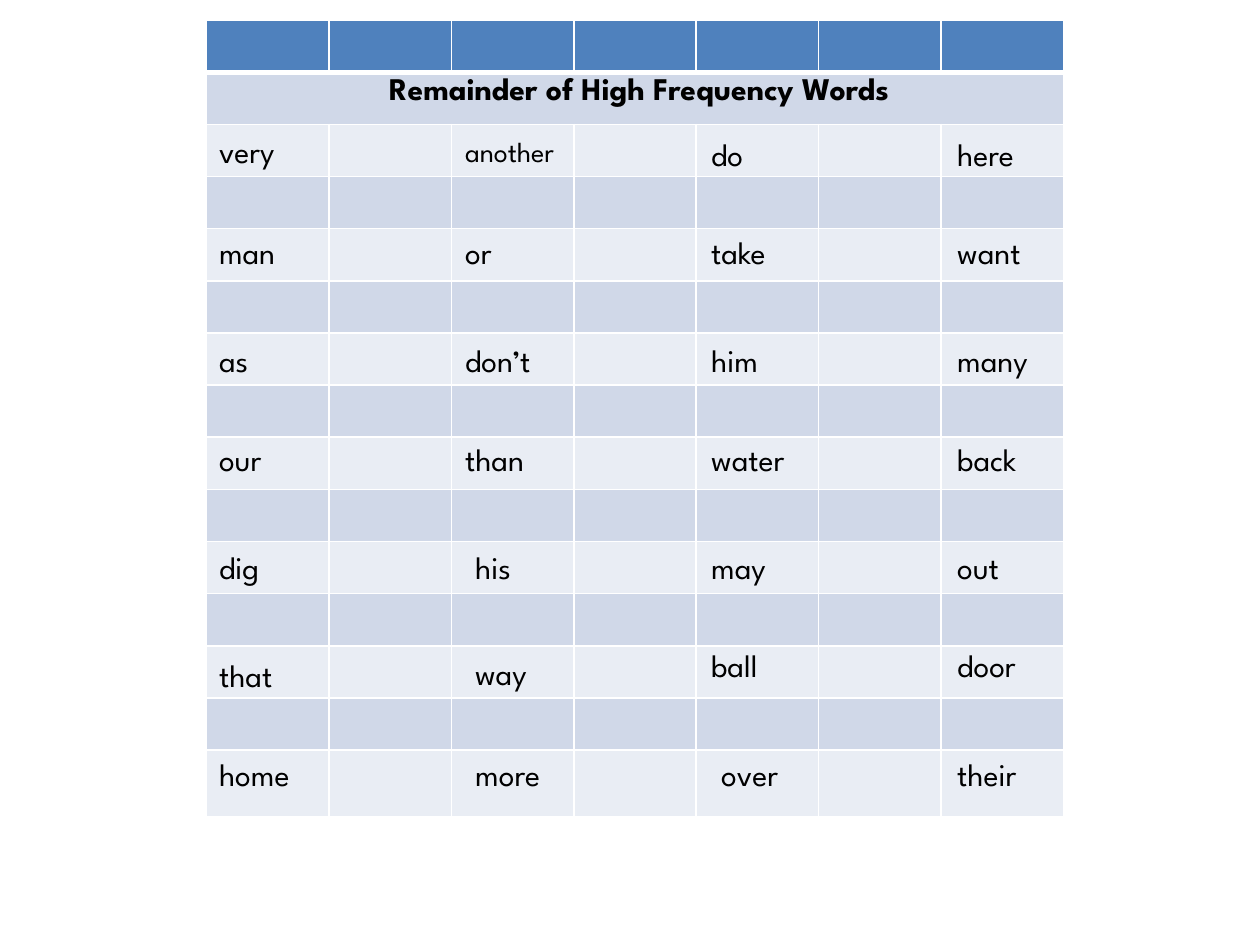
from dataclasses import dataclass

from lxml.etree import SubElement
from pptx import Presentation
from pptx.dml.color import RGBColor
from pptx.enum.text import MSO_AUTO_SIZE as AUTO, PP_ALIGN
from pptx.oxml.ns import qn
from pptx.util import Inches, Pt

FONT = "League Spartan"
BLACK, WHITE, BLUE = "000000", "FFFFFF", "4F81BD"
BANDS = ("E9EDF4", "D0D8E8")
LEFT, TOP, WIDTH = 1.64, 0.16, 6.8
ROWS, COLS = 15, 7
LAST_ROW, ROW = 0.53, 0.414
WORD_PITCH, WORD_WIDTH = 1.953, 0.94


@dataclass
class Word:
    """A word and how its box departs from the grid."""
    text: str
    dx: float = 0
    dy: float = 0
    width: float = WORD_WIDTH
    height: float = 0.4
    size: int = 18


@dataclass
class WordRow:
    """The top of a row and its four words."""
    top: float
    words: list[Word]


def indented(text: str, dy: float = 0) -> Word:
    """Make a word whose box starts a little further right."""
    return Word(text, dx=0.08, dy=dy, width=0.86)


WORD_ROWS = [
    WordRow(1.02, [Word("very", dy=-0.02),
                   Word("another", width=1.09, height=0.37, size=16),
                   Word("do"), Word("here")]),
    WordRow(1.8, [Word("man"), Word("or"), Word("take"), Word("want", width=0.86)]),
    WordRow(2.66, [Word("as"), Word("don’t"), Word("him"), Word("many")]),
    WordRow(3.44, [Word("our"), Word("than"), Word("water"), Word("back")]),
    WordRow(4.3, [Word("dig"), indented("his"), Word("may"), Word("out", width=0.86)]),
    WordRow(5.08, [Word("that", dy=0.08), indented("way", dy=0.06),
                   Word("ball"), Word("door", width=0.86)]),
    WordRow(5.94, [Word("home"), indented("more"), indented("over"), Word("their")]),
]


def rgb(value: str) -> RGBColor:
    """Turn a hex string into a colour."""
    return RGBColor.from_string(value)


def add_run(p, text: str, size: int, bold: bool = False) -> None:
    """Add one black run to a paragraph."""
    r = p.add_run()
    r.text = text
    r.font.name = FONT
    r.font.size = Pt(size)
    r.font.bold = bold
    r.font.color.rgb = rgb(BLACK)


def style_cell(cell, fill: str, top: float = 1, bottom: float = 1) -> None:
    """Give a cell white borders and a solid fill."""
    tc_pr = cell._tc.get_or_add_tcPr()
    for tag, width in (("lnL", 1), ("lnR", 1), ("lnT", top), ("lnB", bottom)):
        ln = SubElement(tc_pr, qn(f"a:{tag}"), w=str(Pt(width)))
        SubElement(SubElement(ln, qn("a:solidFill")), qn("a:srgbClr"), val=WHITE)
    cell.fill.solid()
    cell.fill.fore_color.rgb = rgb(fill)


def add_grid(s) -> None:
    """Draw the banded table with its merged title row."""
    height = ROW * (ROWS - 1) + LAST_ROW
    table = s.shapes.add_table(ROWS, COLS, Inches(LEFT), Inches(TOP),
                               Inches(WIDTH), Inches(height)).table
    for col in table.columns:
        col.width = Inches(WIDTH / COLS)
    for i, row in enumerate(table.rows):
        row.height = Inches(LAST_ROW if i == ROWS - 1 else ROW)
        for cell in row.cells:
            style_cell(cell, BANDS[i % 2] if i else BLUE,
                       top=3 if i == 1 else 1, bottom=1 if i else 3)
    title = table.cell(1, 0)
    title.merge(table.cell(1, COLS - 1))
    p = title.text_frame.paragraphs[0]
    p.alignment = PP_ALIGN.CENTER
    add_run(p, " Remainder of High Frequency Words", 18, bold=True)


def add_word(s, word: Word, left: float, top: float) -> None:
    """Place one word in a text box."""
    sp = s.shapes.add_textbox(Inches(left + word.dx), Inches(top + word.dy),
                              Inches(word.width), Inches(word.height))
    tf = sp.text_frame
    tf.word_wrap = True
    tf.auto_size = AUTO.SHAPE_TO_FIT_TEXT
    add_run(tf.paragraphs[0], word.text, word.size)


def main() -> None:
    """Build the word list slide."""
    prs = Presentation()
    prs.slide_width, prs.slide_height = Inches(10), Inches(7.5)
    s = prs.slides.add_slide(prs.slide_layouts[6])
    add_grid(s)
    for row in WORD_ROWS:
        for i, word in enumerate(row.words):
            add_word(s, word, LEFT + i * WORD_PITCH, row.top)
    prs.save("out.pptx")


if __name__ == "__main__":
    main()
